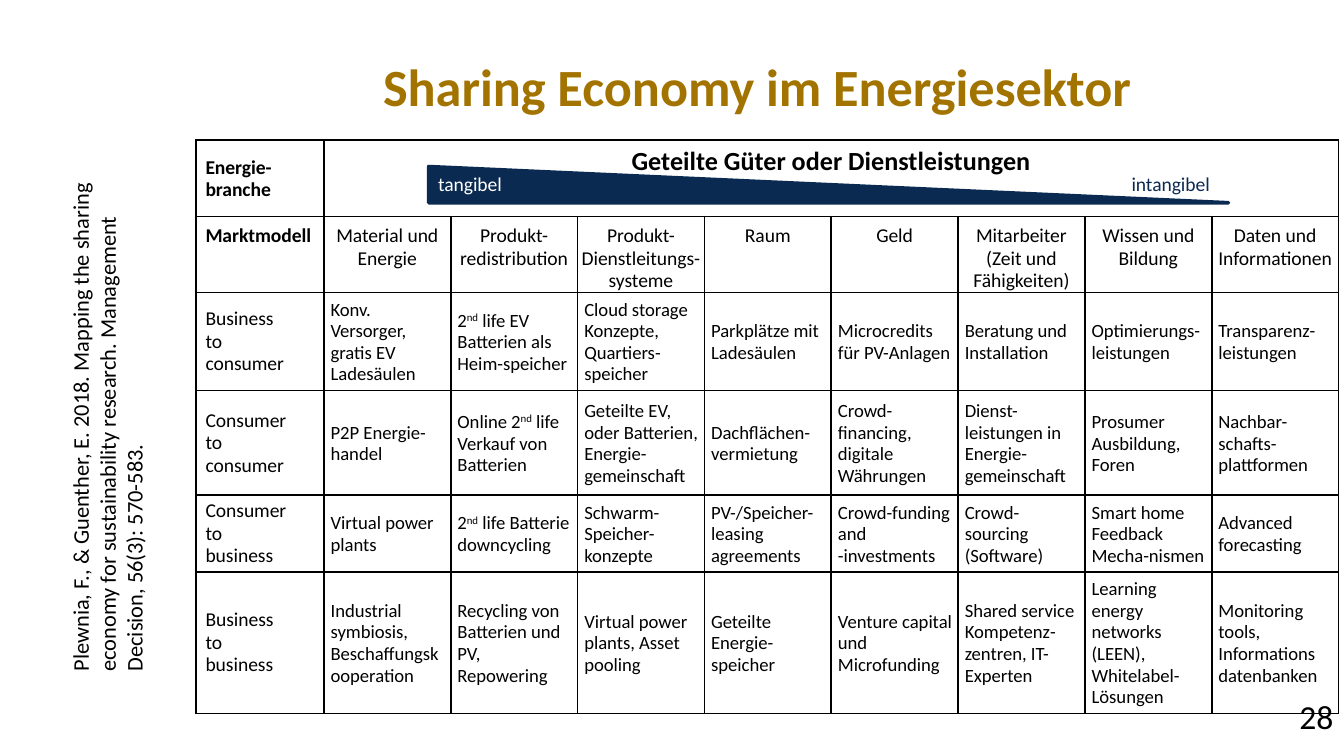
"""Build the slide on the sharing economy in the energy sector."""
from dataclasses import dataclass

import lxml.etree
import pptx
import pptx.dml.color
import pptx.enum.shapes
import pptx.enum.text
import pptx.oxml.ns
import pptx.util

Pt = pptx.util.Pt
ALIGN = pptx.enum.text.PP_ALIGN
ANCHOR = pptx.enum.text.MSO_ANCHOR
FONT = "Calibri"
BLACK, WHITE, NAVY, GOLD = "000000", "FFFFFF", "0B2A51", "A37300"


@dataclass(frozen=True)
class TextStyle:
    size: float
    color: str = BLACK
    bold: bool = False
    align: ALIGN = ALIGN.LEFT
    spacing: float = 1.0


@dataclass(frozen=True)
class CellStyle:
    text: TextStyle
    margins: tuple[float, float, float, float]
    anchor: ANCHOR = ANCHOR.MIDDLE


@dataclass(frozen=True)
class Label:
    text: str
    left: float
    top: float
    width: float
    height: float
    style: TextStyle
    margins: tuple[float, float, float, float] = (7.2, 3.6, 7.2, 3.6)
    rotation: float = 0


HEADER_MARGINS = (5, 3.6, 5, 2.9)
CORNER = CellStyle(TextStyle(10.5, bold=True, spacing=0.95), HEADER_MARGINS)
GOODS = CellStyle(TextStyle(14, bold=True, align=ALIGN.CENTER, spacing=0.95), HEADER_MARGINS, ANCHOR.TOP)
MODEL = CellStyle(TextStyle(10.5, bold=True, spacing=0.95), (5, 4.3, 5, 2.9), ANCHOR.TOP)
CATEGORY = CellStyle(TextStyle(10.5, align=ALIGN.CENTER, spacing=0.95), (0.7, 4.3, 0.7, 0), ANCHOR.TOP)
MARKET = CellStyle(TextStyle(10.5, spacing=0.95), (5, 0.7, 5, 0.7))
EXAMPLE = CellStyle(TextStyle(10, spacing=0.95), (3.6, 3.6, 2.9, 2.9))

CATEGORIES = ["Marktmodell", "Material und Energie", "Produkt- redistribution",
              "Produkt-Dienstleitungs-systeme", "Raum", "Geld",
              "Mitarbeiter (Zeit und Fähigkeiten)", "Wissen und Bildung",
              "Daten und Informationen"]
MARKETS = [
    ["Business\nto\nconsumer", "Konv. Versorger, gratis EV Ladesäulen",
     "2^nd^ life EV Batterien als Heim-speicher", "Cloud storage Konzepte, Quartiers-speicher",
     "Parkplätze mit Ladesäulen", "Microcredits für PV-Anlagen", "Beratung und Installation",
     "Optimierungs-leistungen", "Transparenz-leistungen"],
    ["Consumer\nto\nconsumer", "P2P Energie-handel", "Online 2^nd^ life Verkauf von Batterien",
     "Geteilte EV, oder Batterien, Energie-gemeinschaft", "Dachflächen-vermietung",
     "Crowd-financing, digitale Währungen", "Dienst-leistungen in Energie-gemeinschaft",
     "Prosumer Ausbildung, Foren", "Nachbar-schafts-plattformen"],
    ["Consumer\nto\nbusiness", "Virtual power plants", "2^nd^ life Batterie downcycling",
     "Schwarm-Speicher-konzepte", "PV-/Speicher-leasing agreements",
     "Crowd-funding and -investments", "Crowd-sourcing (Software)",
     "Smart home Feedback Mecha-nismen", "Advanced forecasting"],
    ["Business\nto\nbusiness", "Industrial symbiosis, Beschaffungskooperation",
     "Recycling von Batterien und PV, Repowering", "Virtual power plants, Asset pooling",
     "Geteilte Energie-speicher", "Venture capital und Microfunding",
     "Shared service Kompetenz-zentren, IT-Experten",
     "Learning energy networks (LEEN),\nWhitelabel-Lösungen",
     "Monitoring tools, Informations datenbanken"],
]
COLUMN_WIDTHS = [68.4] + [67.95] * 8
ROW_HEIGHTS = [41, 39, 46, 56, 36, 66]

LABEL_MARGINS = (5, 2.9, 5, 2.9)
INTANGIBLE = Label("intangibel", 601.2, 89.3, 81.4, 18, TextStyle(10.5, NAVY), LABEL_MARGINS)
TANGIBLE = Label("tangibel", 229.7, 89.3, 76.3, 18, TextStyle(10.5, WHITE), LABEL_MARGINS)
CITATION = Label("Plewnia, F., & Guenther, E. 2018. Mapping the sharing economy for "
                 "sustainability research. Management Decision, 56(3): 570-583.",
                 -84.2, 199.4, 283.7, 51.1, TextStyle(12), rotation=270)
PAGE_NUMBER = Label("28", 689, 369.4, 33.8, 19.4, TextStyle(18))


def rgb(color: str) -> pptx.dml.color.RGBColor:
    """Turn a hex string into a colour."""
    return pptx.dml.color.RGBColor.from_string(color)


def write_text(text_frame, text: str, style: TextStyle) -> None:
    """Write one paragraph per line, with ^marked^ pieces as superscript."""
    for index, line in enumerate(text.split("\n")):
        paragraph = text_frame.add_paragraph() if index else text_frame.paragraphs[0]
        paragraph.alignment = style.align
        paragraph.line_spacing = style.spacing
        for position, piece in enumerate(line.split("^")):
            run = paragraph.add_run()
            run.text = piece
            run.font.name = FONT
            run.font.size = Pt(style.size)
            run.font.bold = style.bold
            run.font.color.rgb = rgb(style.color)
            if position % 2:
                run.font._element.set("baseline", "30000")


def set_margins(target, margins: tuple[float, float, float, float]) -> None:
    """Set the left, top, right and bottom margins of a cell or text frame."""
    for side, margin in zip(("left", "top", "right", "bottom"), margins):
        setattr(target, f"margin_{side}", Pt(margin))


def format_cell(cell) -> None:
    """Give a cell a white fill and thin black borders."""
    cell.fill.solid()
    cell.fill.fore_color.rgb = rgb(WHITE)
    properties = cell._tc.get_or_add_tcPr()
    qualify = pptx.oxml.ns.qn
    for index, side in enumerate("LRTB"):
        border = lxml.etree.Element(qualify(f"a:ln{side}"), w=str(Pt(0.96)))
        fill = lxml.etree.SubElement(border, qualify("a:solidFill"))
        lxml.etree.SubElement(fill, qualify("a:srgbClr"), val=BLACK)
        properties.insert(index, border)


def write_cell(cell, text: str, style: CellStyle) -> None:
    """Write styled text into a table cell."""
    set_margins(cell, style.margins)
    cell.vertical_anchor = style.anchor
    write_text(cell.text_frame, text, style.text)


def add_title(slide, text: str) -> None:
    """Fill and place the title placeholder."""
    title = slide.shapes.title
    title.left, title.top, title.width, title.height = Pt(198), Pt(16.6), Pt(485.3), Pt(59)
    title.text_frame.vertical_anchor = ANCHOR.MIDDLE
    write_text(title.text_frame, text, TextStyle(28, GOLD, bold=True))


def add_market_table(slide) -> None:
    """Add the table of market models and shared goods."""
    table = slide.shapes.add_table(len(ROW_HEIGHTS), len(COLUMN_WIDTHS), Pt(105.1), Pt(75),
                                   Pt(sum(COLUMN_WIDTHS)), Pt(sum(ROW_HEIGHTS))).table
    table.first_row = table.horz_banding = False
    for column, width in zip(table.columns, COLUMN_WIDTHS):
        column.width = Pt(width)
    for row, height in zip(table.rows, ROW_HEIGHTS):
        row.height = Pt(height)
    for cell in table.iter_cells():
        format_cell(cell)
    table.cell(0, 1).merge(table.cell(0, len(COLUMN_WIDTHS) - 1))
    write_cell(table.cell(0, 0), "Energie-branche", CORNER)
    write_cell(table.cell(0, 1), "Geteilte Güter oder Dienstleistungen", GOODS)
    for row_index, texts in enumerate([CATEGORIES, *MARKETS], start=1):
        first, other = (MODEL, CATEGORY) if row_index == 1 else (MARKET, EXAMPLE)
        for column_index, text in enumerate(texts):
            write_cell(table.cell(row_index, column_index), text, other if column_index else first)


def add_label(slide, label: Label) -> None:
    """Add a text box."""
    shape = slide.shapes.add_textbox(Pt(label.left), Pt(label.top), Pt(label.width), Pt(label.height))
    shape.rotation = label.rotation
    shape.text_frame.word_wrap = True
    set_margins(shape.text_frame, label.margins)
    write_text(shape.text_frame, label.text, label.style)


def add_wedge(slide) -> None:
    """Add the wedge that runs from tangible to intangible."""
    shape = slide.shapes.add_shape(pptx.enum.shapes.MSO_SHAPE.RIGHT_TRIANGLE,
                                   Pt(229.7), Pt(89.3), Pt(428.4), Pt(19.4))
    shape.shadow.inherit = False
    shape.fill.solid()
    shape.fill.fore_color.rgb = rgb(NAVY)
    shape.line.color.rgb = rgb(NAVY)
    shape.line.width = Pt(2)


def main() -> None:
    """Build and save the presentation."""
    presentation = pptx.Presentation()
    presentation.slide_width, presentation.slide_height = Pt(720), Pt(405)
    slide = presentation.slides.add_slide(presentation.slide_layouts.get_by_name("Title Only"))
    add_title(slide, "Sharing Economy im Energiesektor")
    add_market_table(slide)
    add_label(slide, INTANGIBLE)
    add_wedge(slide)
    for label in (TANGIBLE, CITATION, PAGE_NUMBER):
        add_label(slide, label)
    presentation.save("out.pptx")


if __name__ == "__main__":
    main()
